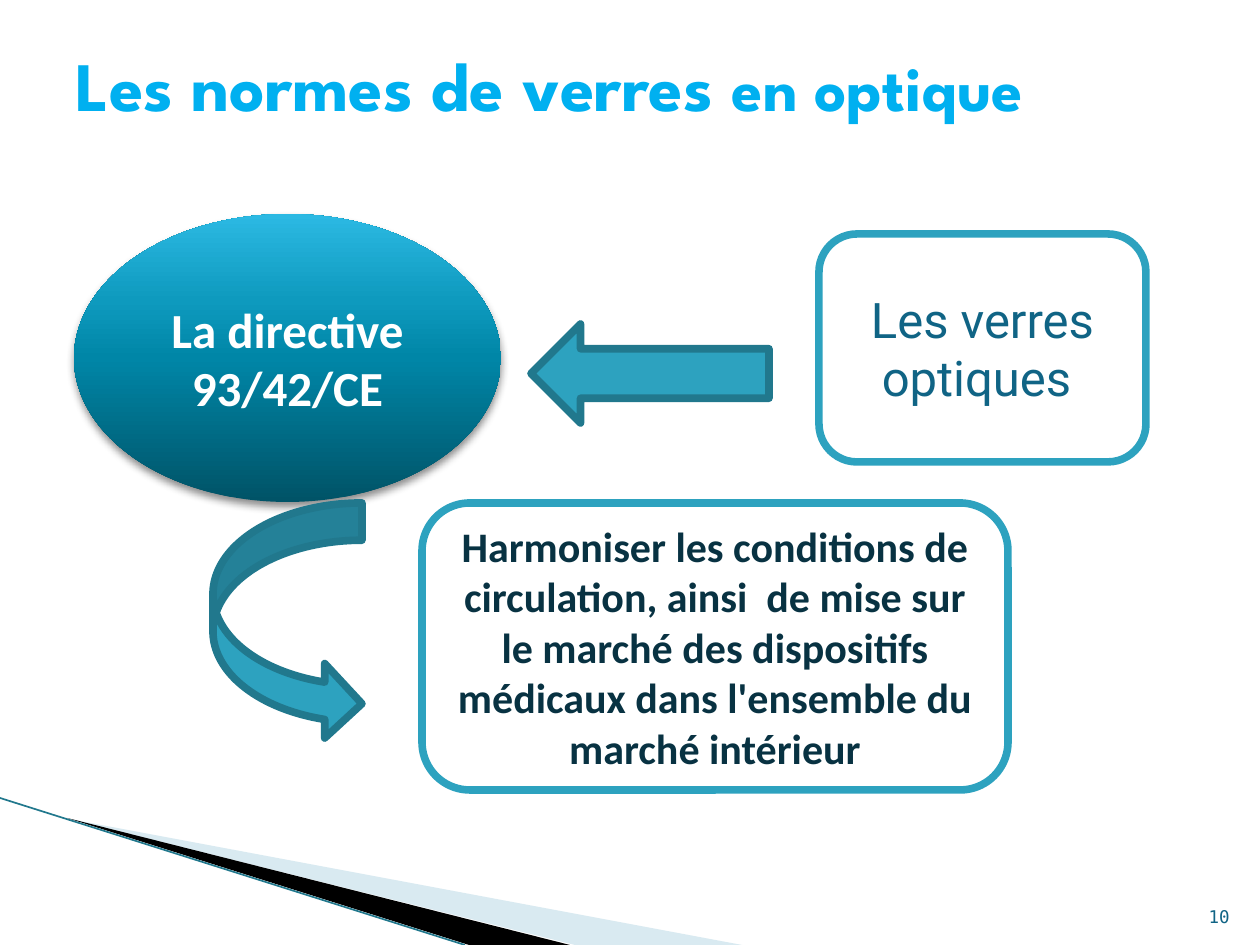
from dataclasses import dataclass
from typing import Optional

import pptx
import pptx.dml.color
import pptx.enum.shapes
import pptx.enum.text
import pptx.oxml
import pptx.oxml.ns
import pptx.util
from lxml import etree

RGB = pptx.dml.color.RGBColor
SHAPE = pptx.enum.shapes.MSO_SHAPE
ALIGN = pptx.enum.text.PP_ALIGN
ANCHOR = pptx.enum.text.MSO_ANCHOR
NSDECL = pptx.oxml.ns.nsdecls("a")
qn = pptx.oxml.ns.qn

EMU_PER_PX = 914400 / 126
BORDER_PT = 4.33

WHITE = RGB(0xFF, 0xFF, 0xFF)
BLACK = RGB(0x00, 0x00, 0x00)
SKY = RGB(0x00, 0xB0, 0xF0)
TEAL = RGB(0x2D, 0xA2, 0xBF)
DARK_TEAL = RGB(0x21, 0x78, 0x8D)
PETROL = RGB(0x10, 0x64, 0x85)
NAVY = RGB(0x08, 0x32, 0x42)
PALE_BLUE = RGB(0xA0, 0xCB, 0xDC)
ELLIPSE_STOPS = (
    (0, RGB(0x00, 0x53, 0x67)),
    (50, RGB(0x00, 0x86, 0xA7)),
    (70, RGB(0x0E, 0x9A, 0xBE)),
    (100, RGB(0x2C, 0xB9, 0xE3)),
)


@dataclass(frozen=True)
class Box:
    x: int
    y: int
    w: int
    h: int


@dataclass(frozen=True)
class Label:
    text: str
    size: float
    font: str
    color: RGB
    bold: bool = False


@dataclass(frozen=True)
class Node:
    kind: SHAPE
    box: Box
    fill: RGB
    line: Optional[RGB]
    label: Optional[Label] = None
    rotation: int = 0


@dataclass(frozen=True)
class Wedge:
    points: tuple
    fill: RGB
    alpha: int = 100


DIRECTIVE = Node(SHAPE.OVAL, Box(74, 214, 427, 288), TEAL, None,
                 Label("La directive 93/42/CE", 28, "Calibri", WHITE, True))
NODES = (
    Node(SHAPE.RIGHT_ARROW, Box(531, 324, 238, 99), TEAL, DARK_TEAL, rotation=180),
    Node(SHAPE.ROUNDED_RECTANGLE, Box(819, 234, 327, 228), WHITE, TEAL,
         Label("Les verres optiques ", 28, "Roboto", PETROL)),
    Node(SHAPE.CURVED_RIGHT_ARROW, Box(213, 503, 149, 238), TEAL, DARK_TEAL),
    Node(SHAPE.ROUNDED_RECTANGLE, Box(422, 503, 586, 287), WHITE, TEAL,
         Label("Harmoniser les conditions de circulation, ainsi  de mise sur "
               "le marché des dispositifs médicaux dans l'ensemble du "
               "marché intérieur", 24, "Calibri", NAVY, True)),
)
WEDGES = (
    Wedge(((69, 819), (742, 945), (575, 945)), PALE_BLUE, 40),
    Wedge(((67, 818), (570, 945), (469, 945)), BLACK),
)


def px(n: int) -> pptx.util.Emu:
    return pptx.util.Emu(round(n * EMU_PER_PX))


def place(box: Box) -> tuple:
    return px(box.x), px(box.y), px(box.w), px(box.h)


def add_run(p, text: str, *, size: float, font: str, color: RGB, bold: bool = False) -> None:
    r = p.add_run()
    r.text = text
    r.font.size = pptx.util.Pt(size)
    r.font.name = font
    r.font.bold = bold
    r.font.color.rgb = color


def write(s, *labels: Label, align=ALIGN.CENTER, anchor=ANCHOR.MIDDLE) -> None:
    """Put the labels in one paragraph of the shape."""
    tf = s.text_frame
    tf.word_wrap = True
    tf.vertical_anchor = anchor
    p = tf.paragraphs[0]
    p.alignment = align
    for label in labels:
        add_run(p, label.text, size=label.size, font=label.font,
                color=label.color, bold=label.bold)


def add_node(slide, node: Node):
    s = slide.shapes.add_shape(node.kind, *place(node.box))
    s.shadow.inherit = False
    s.rotation = node.rotation
    s.fill.solid()
    s.fill.fore_color.rgb = node.fill
    if node.line is None:
        s.line.fill.background()
    else:
        s.line.color.rgb = node.line
        s.line.width = pptx.util.Pt(BORDER_PT)
    if node.label:
        write(s, node.label)
    return s


def add_gradient_and_shadow(s) -> None:
    stops = "".join(f'<a:gs pos="{pos * 1000}"><a:srgbClr val="{color}"/></a:gs>'
                    for pos, color in ELLIPSE_STOPS)
    gradient = pptx.oxml.parse_xml(
        f'<a:gradFill {NSDECL} rotWithShape="1"><a:gsLst>{stops}</a:gsLst>'
        '<a:lin ang="16200000" scaled="0"/></a:gradFill>')
    shadow = pptx.oxml.parse_xml(
        f'<a:outerShdw {NSDECL} blurRad="63500" dist="38100" dir="5400000" '
        'rotWithShape="0"><a:srgbClr val="000000"><a:alpha val="45000"/>'
        '</a:srgbClr></a:outerShdw>')
    sp_pr = s._element.spPr
    sp_pr.replace(sp_pr.find(qn("a:solidFill")), gradient)
    sp_pr.find(qn("a:effectLst")).append(shadow)


def add_wedge(slide, wedge: Wedge) -> None:
    start, *rest = wedge.points
    builder = slide.shapes.build_freeform(*start, scale=EMU_PER_PX)
    builder.add_line_segments(rest, close=True)
    s = builder.convert_to_shape()
    s.shadow.inherit = False
    s.fill.solid()
    s.fill.fore_color.rgb = wedge.fill
    s.line.fill.background()
    if wedge.alpha < 100:
        color = s._element.spPr.find(qn("a:solidFill")).find(qn("a:srgbClr"))
        etree.SubElement(color, qn("a:alpha")).set("val", str(wedge.alpha * 1000))


def add_corner_line(slide) -> None:
    s = slide.shapes.add_connector(pptx.enum.shapes.MSO_CONNECTOR.STRAIGHT,
                                   px(0), px(798), px(465), px(945))
    s.line.color.rgb = DARK_TEAL
    s.line.width = pptx.util.Pt(0.95)
    etree.SubElement(s._element.spPr, qn("a:effectLst"))


def main() -> None:
    prs = pptx.Presentation()
    prs.slide_width, prs.slide_height = px(1260), px(945)
    slide = prs.slides.add_slide(prs.slide_layouts[6])

    for wedge in WEDGES:
        add_wedge(slide, wedge)
    add_corner_line(slide)

    title = slide.shapes.add_textbox(*place(Box(63, 38, 1134, 92)))
    write(title, Label("Les normes de verres ", 39.6, "League Spartan", SKY, True),
          Label("en optique", 36, "League Spartan", SKY, True), align=ALIGN.LEFT)

    add_gradient_and_shadow(add_node(slide, DIRECTIVE))
    for node in NODES:
        add_node(slide, node)

    number = slide.shapes.add_textbox(*place(Box(1192, 883, 50, 50)))
    write(number, Label("10", 10, "DejaVu Sans Mono", PETROL),
          align=ALIGN.RIGHT, anchor=ANCHOR.BOTTOM)
    prs.save("out.pptx")


if __name__ == "__main__":
    main()
